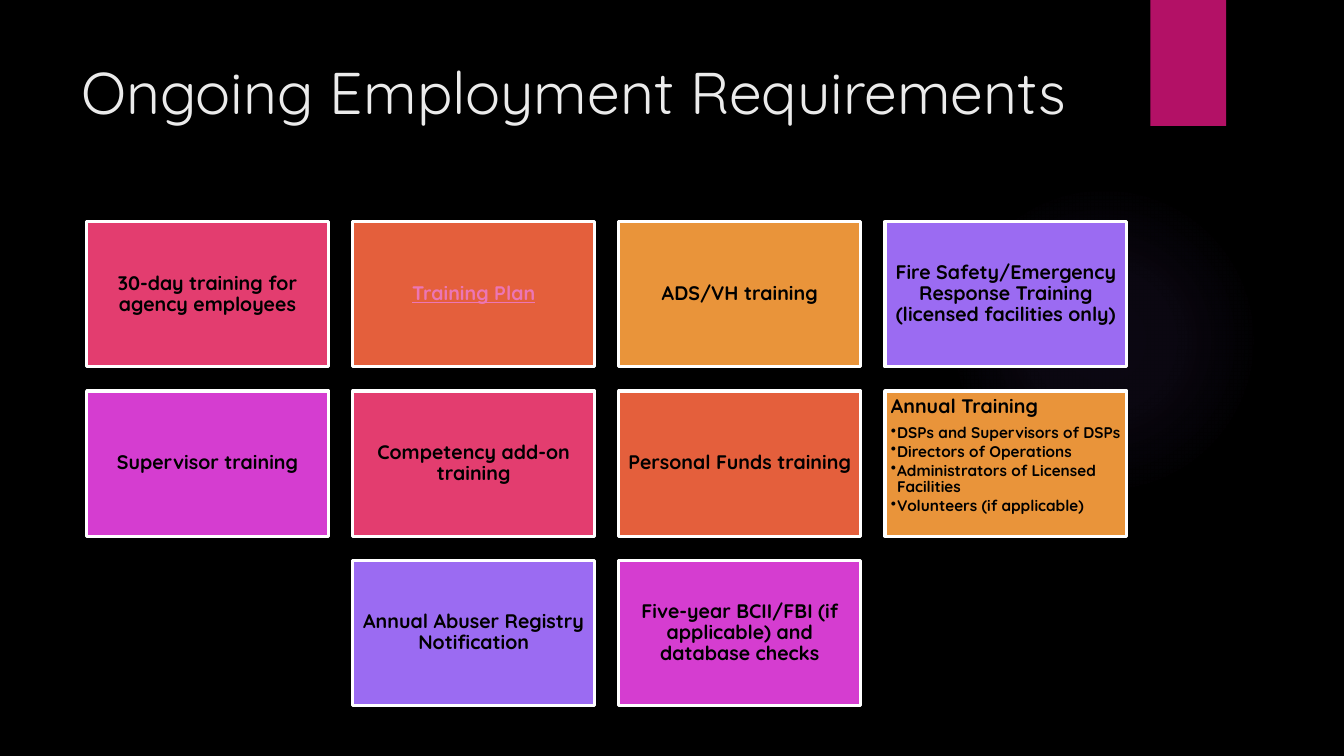
from lxml import etree
from pptx import Presentation
from pptx.dml.color import RGBColor
from pptx.enum import shapes, text
from pptx.oxml import parse_xml
from pptx.oxml.ns import nsdecls, qn
from pptx.util import Pt

FONT = "Quicksand"
BLACK = RGBColor(0x00, 0x00, 0x00)
WHITE = RGBColor(0xFF, 0xFF, 0xFF)
TITLE_GREY = RGBColor(0xEB, 0xEB, 0xEB)
MAGENTA = RGBColor(0xB3, 0x11, 0x66)
LINK_PINK = RGBColor(0xEC, 0x76, 0xB5)
VIOLET = RGBColor(0x9B, 0x6B, 0xF2)
CARD_COLORS = [
    RGBColor(0xE3, 0x3D, 0x6F),
    RGBColor(0xE4, 0x5F, 0x3C),
    RGBColor(0xE9, 0x94, 0x3A),
    VIOLET,
    RGBColor(0xD5, 0x3D, 0xD0),
]

COLUMNS = 4
GRID_LEFT, GRID_TOP = 61.92, 158.4
CARD_W, CARD_H = 172.8, 103.68
GAP = 17.28

PLAN = "Training Plan"
ANNUAL = "Annual Training"
REQUIREMENTS = [
    "30-day training for agency employees",
    PLAN,
    "ADS/VH training",
    "Fire Safety/Emergency Response Training (licensed facilities only)",
    "Supervisor training",
    "Competency add-on training",
    "Personal Funds training",
    ANNUAL,
    "Annual Abuser Registry Notification",
    "Five-year BCII/FBI (if applicable) and database checks",
]
ANNUAL_GROUPS = [
    "DSPs and Supervisors of DSPs",
    "Directors of Operations",
    "Administrators of Licensed Facilities",
    "Volunteers (if applicable)",
]


def add_shape(slide, kind, left, top, width, height, fill=None, line=None):
    sp = slide.shapes.add_shape(kind, Pt(left), Pt(top), Pt(width), Pt(height))
    sp.shadow.inherit = False
    if fill is not None:
        sp.fill.solid()
        sp.fill.fore_color.rgb = fill
    if line is None:
        sp.line.fill.background()
    else:
        sp.line.color.rgb = line
        sp.line.width = Pt(2.25)
    return sp


def write(p, words, size=14, color=BLACK, bold=True, underline=None,
          align=text.PP_ALIGN.CENTER, spacing=0.9, after=4.9):
    p.alignment = align
    p.line_spacing = spacing
    p.space_after = Pt(after)
    r = p.add_run()
    r.text = words
    r.font.name = FONT
    r.font.size = Pt(size)
    r.font.bold = bold
    r.font.underline = underline
    r.font.color.rgb = color


def add_bullet(p, indent):
    p.level = 1
    pPr = p._p.get_or_add_pPr()
    pPr.set("marL", str(Pt(indent)))
    pPr.set("indent", str(-Pt(indent)))
    etree.SubElement(pPr, qn("a:buChar")).set("char", "•")


def add_glow(slide):
    """Faint violet disc that fades out towards its rim."""
    sp = add_shape(slide, shapes.MSO_SHAPE.OVAL, 677.5, 131.8, 221.8, 221.8)
    stops = "".join(
        f'<a:gs pos="{pos * 1000}"><a:srgbClr val="{VIOLET}">'
        f'<a:alpha val="{alpha * 1000}"/></a:srgbClr></a:gs>'
        for pos, alpha in [(0, 7), (36, 6), (69, 0)])
    grad = parse_xml(
        f'<a:gradFill {nsdecls("a")}><a:gsLst>{stops}</a:gsLst>'
        '<a:path path="circle"><a:fillToRect l="50000" t="50000" '
        'r="50000" b="50000"/></a:path></a:gradFill>')
    sp._element.spPr.find(qn("a:prstGeom")).addnext(grad)


def add_title(slide, words):
    title = slide.shapes.title
    title.left, title.top = Pt(51.12), Pt(36)
    title.width, title.height = Pt(740.88), Pt(110.16)
    tf = title.text_frame
    tf.auto_size = text.MSO_AUTO_SIZE.NONE
    tf.vertical_anchor = text.MSO_ANCHOR.TOP
    write(tf.paragraphs[0], words, size=42, color=TITLE_GREY, bold=False,
          align=text.PP_ALIGN.LEFT, spacing=1.0, after=0)


def add_card(slide, left, top, fill, words):
    sp = add_shape(slide, shapes.MSO_SHAPE.RECTANGLE, left, top,
                   CARD_W, CARD_H, fill, WHITE)
    tf = sp.text_frame
    tf.word_wrap = True
    tf.margin_left = tf.margin_right = Pt(4.2)
    tf.margin_top = tf.margin_bottom = Pt(4.2)
    p = tf.paragraphs[0]
    if words == ANNUAL:
        tf.vertical_anchor = text.MSO_ANCHOR.TOP
        write(p, words, align=text.PP_ALIGN.LEFT)
        for group in ANNUAL_GROUPS:
            p = tf.add_paragraph()
            add_bullet(p, 4.5)
            write(p, group, size=11, align=text.PP_ALIGN.LEFT, after=1.65)
        return
    tf.vertical_anchor = text.MSO_ANCHOR.MIDDLE
    if words == PLAN:
        write(p, words, color=LINK_PINK, underline=True)
    else:
        write(p, words)


def add_cards(slide):
    """Rows of four cards; a shorter last row is centred."""
    for i, words in enumerate(REQUIREMENTS):
        row, col = divmod(i, COLUMNS)
        in_row = min(COLUMNS, len(REQUIREMENTS) - row * COLUMNS)
        col += (COLUMNS - in_row) / 2
        add_card(slide, GRID_LEFT + col * (CARD_W + GAP),
                 GRID_TOP + row * (CARD_H + GAP),
                 CARD_COLORS[i % len(CARD_COLORS)], words)


def main():
    prs = Presentation()
    prs.slide_width, prs.slide_height = Pt(960), Pt(540)
    slide = prs.slides.add_slide(prs.slide_layouts[5])
    slide.background.fill.solid()
    slide.background.fill.fore_color.rgb = BLACK
    add_glow(slide)
    add_title(slide, "Ongoing Employment Requirements")
    add_shape(slide, shapes.MSO_SHAPE.RECTANGLE, 821.8, 0, 54, 90, MAGENTA)
    add_cards(slide)
    prs.save("out.pptx")


if __name__ == "__main__":
    main()
